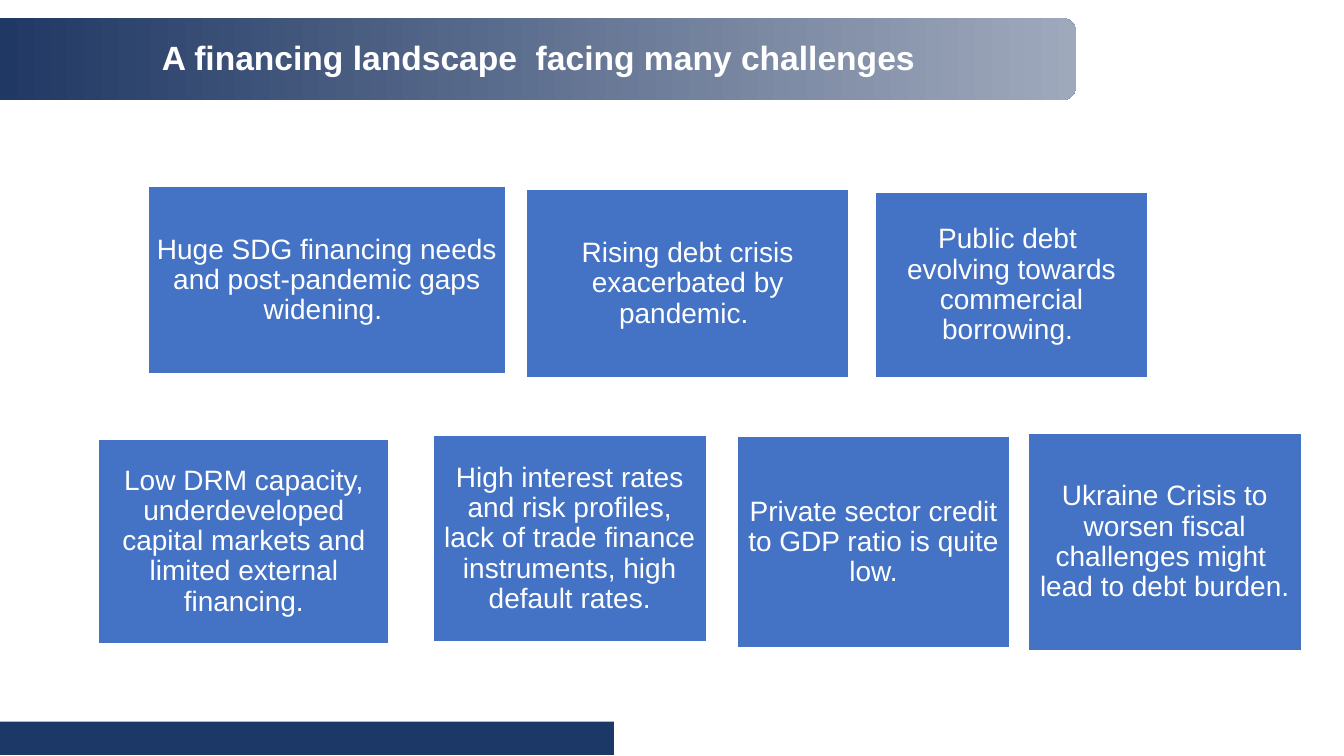
from pptx import Presentation
from pptx.dml.color import RGBColor
from pptx.enum.shapes import MSO_SHAPE
from pptx.enum.text import MSO_ANCHOR, MSO_AUTO_SIZE, PP_ALIGN
from pptx.util import Pt

RECTANGLE = MSO_SHAPE.RECTANGLE
ROUNDED_END = MSO_SHAPE.ROUND_2_SAME_RECTANGLE
CENTER = PP_ALIGN.CENTER
MIDDLE = MSO_ANCHOR.MIDDLE
NO_AUTOFIT = MSO_AUTO_SIZE.NONE

TITLE = "A financing landscape  facing many challenges "
# left, top, width, height, text
CHALLENGES = [
    (106, 133.3, 255, 134, "Huge SDG financing needs and post-pandemic gaps widening. "),
    (376, 135.5, 230.5, 134.5, "Rising debt crisis exacerbated by pandemic. "),
    (625, 137.5, 195, 132.5, "Public debt  evolving towards commercial borrowing. "),
    (70.5, 314, 207.5, 145.5,
     "Low DRM capacity, underdeveloped capital markets and limited external financing."),
    (309.5, 311.3, 195, 147,
     "High interest rates and risk profiles, lack of trade finance instruments, "
     "high default rates."),
    (526.5, 311.8, 195, 151, "Private sector credit to GDP ratio is quite low."),
    (734.5, 309.8, 195, 155,
     "Ukraine Crisis to worsen fiscal challenges might  lead to debt burden. "),
]


def color(hex_value):
    return RGBColor.from_string(hex_value)


def write_text(shape, text, size=20, bold=False, inset=5.6):
    frame = shape.text_frame
    frame.word_wrap = True
    frame.auto_size = NO_AUTOFIT
    frame.vertical_anchor = MIDDLE
    frame.margin_left = frame.margin_right = Pt(inset)
    frame.margin_top = frame.margin_bottom = Pt(inset)
    paragraph = frame.paragraphs[0]
    paragraph.text = text
    paragraph.alignment = CENTER
    paragraph.line_spacing = 0.9
    paragraph.font.name = "Arial"
    paragraph.font.size = Pt(size)
    paragraph.font.bold = bold
    paragraph.font.color.rgb = color("FFFFFF")


class ChallengeSlide:
    navy, navy_tint, footer_navy = "203864", "9FA9BC", "1C3867"
    box_blue, white = "4472C4", "FFFFFF"

    def __init__(self, presentation):
        self.slide = presentation.slides.add_slide(presentation.slide_layouts[5])

    def add_shape(self, kind, left, top, width, height):
        shape = self.slide.shapes.add_shape(
            kind, Pt(left), Pt(top), Pt(width), Pt(height))
        shape.shadow.inherit = False
        shape.line.fill.background()
        return shape

    def add_banner(self, left, top, width, height):
        """Turn an upright bar a quarter so that its rounded end is at the right."""
        shift = (width - height) / 2
        banner = self.add_shape(ROUNDED_END, left + shift, top - shift, height, width)
        banner.rotation = 90
        banner.fill.gradient()
        banner.fill.gradient_angle = 90
        for stop, shade in zip(banner.fill.gradient_stops, (self.navy, self.navy_tint)):
            stop.color.rgb = color(shade)

    def add_footer_bar(self, left, top, width, height):
        bar = self.add_shape(RECTANGLE, left, top, width, height)
        bar.fill.solid()
        bar.fill.fore_color.rgb = color(self.footer_navy)

    def add_box(self, left, top, width, height, text):
        box = self.add_shape(RECTANGLE, left, top, width, height)
        box.fill.solid()
        box.fill.fore_color.rgb = color(self.box_blue)
        box.line.color.rgb = color(self.white)
        box.line.width = Pt(1)
        write_text(box, text)

    def set_title(self, left, top, width, height, text):
        """Fill the title placeholder and bring it in front of the banner."""
        title = self.slide.shapes.title
        title.left, title.top = Pt(left), Pt(top)
        title.width, title.height = Pt(width), Pt(height)
        write_text(title, text, size=24, bold=True, inset=3.6)
        self.slide.shapes.element.append(title.element)


def main():
    presentation = Presentation()
    presentation.slide_width, presentation.slide_height = Pt(960), Pt(540)
    page = ChallengeSlide(presentation)
    page.add_banner(0, 13, 768.5, 58.5)
    page.add_footer_bar(0, 515.5, 438.5, 23.8)
    for challenge in CHALLENGES:
        page.add_box(*challenge)
    page.set_title(16, 21, 744, 42.5, TITLE)
    presentation.save("out.pptx")


if __name__ == "__main__":
    main()
